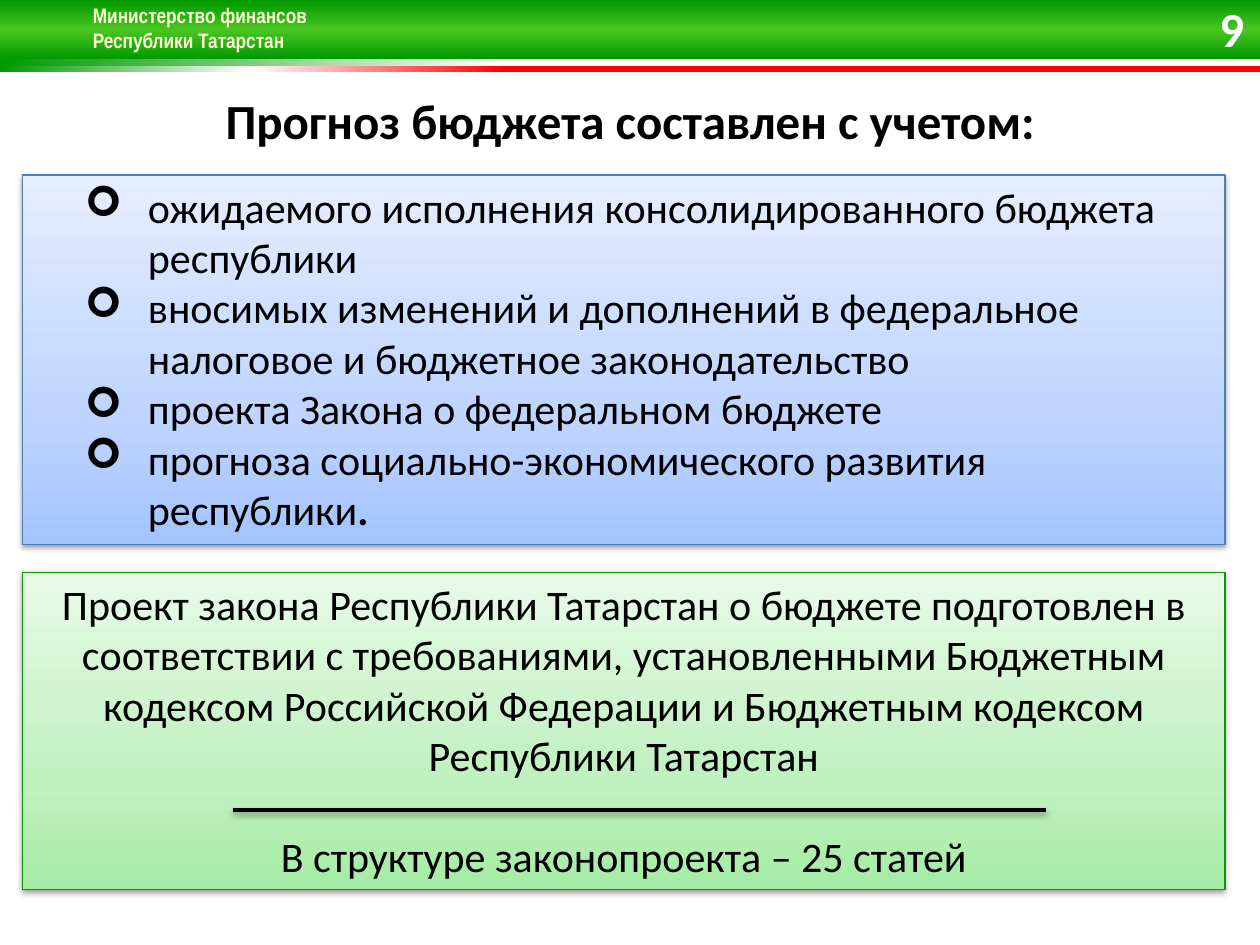
import pptx
import pptx.dml.color
import pptx.enum.shapes
import pptx.enum.text
import pptx.oxml
import pptx.oxml.ns
import pptx.util

Pt = pptx.util.Pt
ALIGN = pptx.enum.text.PP_ALIGN
ANCHOR = pptx.enum.text.MSO_ANCHOR

MINISTRY = ["Министерство финансов", "Республики Татарстан"]
TITLE = "Прогноз бюджета составлен с учетом:"
FACTORS = [
    [("ожидаемого исполнения консолидированного бюджета республики", False)],
    [("вносимых изменений и дополнений в федеральное налоговое и бюджетное законодательство", False)],
    [("проекта Закона о федеральном бюджете", False)],
    [("прогноза социально-экономического развития республики", False), (".", True)],
]
LAW = [
    [("Проект закона Республики Татарстан о бюджете подготовлен в соответствии "
      "с требованиями, установленными Бюджетным кодексом Российской Федерации "
      "и Бюджетным кодексом Республики Татарстан", False)],
    [("В структуре законопроекта – 25 статей", False)],
]
PAGE_NUMBER = "9"

THEME = {
    "body_font": "Calibri", "header_font": "Arial Narrow",
    "header_size": 12, "title_size": 28, "body_size": 24,
    "text": "000000", "header_text": "FFFFD9", "number": "FFFFFF",
    "blue_line": "4B7EBC", "green_line": "0B9700",
    # gradients: stops as (percent, colour), then the angle in degrees
    "banner": ([(0, "009900"), (50, "49C522"), (100, "009900")], 90),
    "white_strip": ([(0, "FFFFFF"), (60, "FFFFFF"), (100, "009900")], 180),
    "red_strip": ([(60, "FF0000"), (80, "FFFFFF"), (100, "009900")], 180),
    "blue": ([(0, "A4C4FF"), (35, "BFD4FF"), (100, "E6EEFF")], 270),
    "green": ([(0, "A5ECA5"), (35, "C1F0C1"), (100, "E7FAE7")], 270),
}
PAGE_WIDTH, PAGE_HEIGHT = 720, 540
BANNER_HEIGHT, STRIP_HEIGHT = 34, 3.7
PANEL_LEFT, PANEL_WIDTH = 13, 687
BODY_LINE = 29


def rgb(name):
    return pptx.dml.color.RGBColor.from_string(THEME[name])


def xml(text):
    return pptx.oxml.parse_xml(text.replace(">", f" {pptx.oxml.ns.nsdecls('a')}>", 1))


def shadow(blur=3.1, distance=1.6, angle=90, alpha=38):
    return xml(f'<a:effectLst><a:outerShdw blurRad="{Pt(blur)}" dist="{Pt(distance)}" '
               f'dir="{angle * 60000}" algn="ctr" rotWithShape="0"><a:srgbClr val="000000">'
               f'<a:alpha val="{alpha * 1000}"/></a:srgbClr></a:outerShdw></a:effectLst>')


def add_gradient_box(page, left, top, width, height, gradient, line=None):
    """Add a gradient rectangle; one with a line also casts a shadow."""
    box = page.shapes.add_shape(pptx.enum.shapes.MSO_SHAPE.RECTANGLE,
                                Pt(left), Pt(top), Pt(width), Pt(height))
    stops, angle = THEME[gradient]
    box.fill.gradient()
    old_fill = box._element.spPr.find(pptx.oxml.ns.qn("a:gradFill"))
    stop_xml = "".join(f'<a:gs pos="{place * 1000}"><a:srgbClr val="{colour}"/></a:gs>'
                       for place, colour in stops)
    old_fill.getparent().replace(old_fill, xml(
        f'<a:gradFill rotWithShape="1"><a:gsLst>{stop_xml}</a:gsLst>'
        f'<a:lin ang="{angle * 60000}" scaled="0"/></a:gradFill>'))
    if line:
        box.line.color.rgb = rgb(line)
        box.line.width = Pt(0.75)
        box._element.spPr.append(shadow())
    else:
        box.line.fill.background()
        box.shadow.inherit = False
    return box


def add_text_box(page, left, top, width, height, wrap=True):
    box = page.shapes.add_textbox(Pt(left), Pt(top), Pt(width), Pt(height))
    box.text_frame.word_wrap = wrap
    return box


def add_span(para, text, size, colour, bold=False, font="body_font"):
    span = para.add_run()
    span.text = text
    span.font.size = Pt(THEME[size])
    span.font.bold = bold
    span.font.color.rgb = rgb(colour)
    span.font.name = THEME[font]
    return span


def write_paragraphs(box, paragraphs, align, bullet=None, gap=0):
    frame = box.text_frame
    frame.word_wrap = True
    frame.vertical_anchor = ANCHOR.TOP
    for index, spans in enumerate(paragraphs):
        para = frame.add_paragraph() if index else frame.paragraphs[0]
        para.alignment = align
        if index and gap:
            para.space_before = Pt(gap)
        if bullet:
            properties = para._p.get_or_add_pPr()
            properties.set("marL", str(Pt(64.5)))
            properties.set("indent", str(Pt(-36)))
            properties.append(xml('<a:buFont typeface="Wingdings"></a:buFont>'))
            properties.append(xml(f'<a:buChar char="{bullet}"></a:buChar>'))
        for text, bold in spans:
            add_span(para, text, "body_size", "text", bold)


def add_header(page):
    add_gradient_box(page, 0, 0, PAGE_WIDTH, BANNER_HEIGHT, "banner")
    for row, strip in enumerate(["white_strip", "red_strip"]):
        add_gradient_box(page, 0, BANNER_HEIGHT + row * STRIP_HEIGHT,
                         PAGE_WIDTH, STRIP_HEIGHT, strip)
    para = add_text_box(page, 46, -2, 138, 36, wrap=False).text_frame.paragraphs[0]
    for index, text in enumerate(MINISTRY):
        if index:
            para.add_line_break()
        span = add_span(para, text, "header_size", "header_text", True, "header_font")
        fill = span._r.rPr.find(pptx.oxml.ns.qn("a:solidFill"))
        fill.addnext(shadow(3, 3, 45, 60))
    number = add_text_box(page, 672, 3.5, 46, 24.5)
    number.text_frame.vertical_anchor = ANCHOR.MIDDLE
    para = number.text_frame.paragraphs[0]
    para.alignment = ALIGN.RIGHT
    add_span(para, PAGE_NUMBER, "title_size", "number", True)


def add_divider(page, left, right, y):
    divider = page.shapes.add_connector(pptx.enum.shapes.MSO_CONNECTOR.STRAIGHT,
                                        Pt(left), Pt(y), Pt(right), Pt(y))
    divider.line.color.rgb = rgb("text")
    divider.line.width = Pt(2)
    divider._element.spPr.append(shadow())


def main():
    deck = pptx.Presentation()
    deck.slide_width, deck.slide_height = Pt(PAGE_WIDTH), Pt(PAGE_HEIGHT)
    page = deck.slides.add_slide(deck.slide_layouts[6])
    add_header(page)

    para = add_text_box(page, 0, 48, PAGE_WIDTH, 41).text_frame.paragraphs[0]
    para.alignment = ALIGN.CENTER
    add_span(para, TITLE, "title_size", "text", True)

    factors = add_gradient_box(page, PANEL_LEFT, 100, PANEL_WIDTH, 211, "blue", "blue_line")
    write_paragraphs(factors, FACTORS, ALIGN.LEFT, bullet="➢")
    law = add_gradient_box(page, PANEL_LEFT, 327, PANEL_WIDTH, 181.5, "green", "green_line")
    write_paragraphs(law, LAW, ALIGN.CENTER, gap=BODY_LINE)
    add_divider(page, 133, 598, 463)

    deck.save("out.pptx")


if __name__ == "__main__":
    main()
